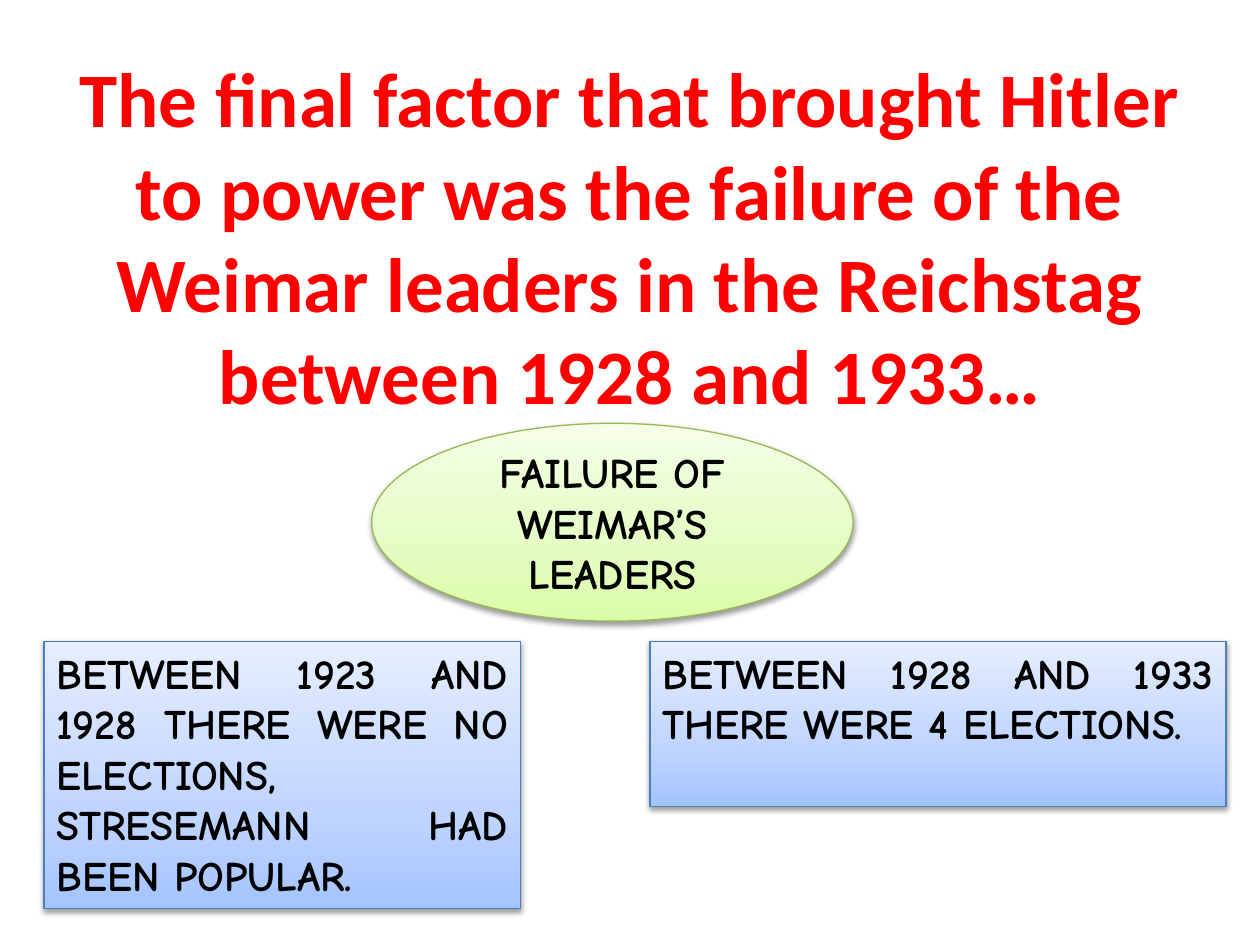
from copy import deepcopy

from lxml import etree
from pptx import Presentation
from pptx.dml.color import RGBColor
from pptx.enum.shapes import MSO_SHAPE
from pptx.enum.text import MSO_ANCHOR, MSO_AUTO_SIZE, PP_ALIGN
from pptx.oxml.ns import qn
from pptx.util import Pt

PX = 9144  # 100 px to the inch
OVAL, RECT = MSO_SHAPE.OVAL, MSO_SHAPE.RECTANGLE
TOP, MIDDLE = MSO_ANCHOR.TOP, MSO_ANCHOR.MIDDLE
CENTER, JUSTIFY = PP_ALIGN.CENTER, PP_ALIGN.JUSTIFY
FIXED = MSO_AUTO_SIZE.NONE

GREEN = ("DAFDA7", "E4FCC2", "F5FFE7")
BLUE = ("A4C4FF", "BFD4FF", "E6EEFF")
STOPS = (0, 0.35, 1)


def color(code):
    return RGBColor.from_string(code)


def scale(box):
    return [n * PX for n in box]


def write(shape, text, font, size, ink, align, anchor):
    frame = shape.text_frame
    frame.word_wrap = True
    frame.auto_size = FIXED
    frame.vertical_anchor = anchor
    para = frame.paragraphs[0]
    para.alignment = align
    run = para.add_run()
    run.text = text
    run.font.name = font
    run.font.size = Pt(size)
    run.font.bold = True
    run.font.color.rgb = color(ink)


def shade(shape, codes):
    """Fill from bottom to top through three colours."""
    fill = shape.fill
    fill.gradient()
    fill.gradient_angle = 90
    stops = shape._element.spPr.find(".//" + qn("a:gsLst"))
    stops.insert(1, deepcopy(stops[0]))
    for stop, code, place in zip(fill.gradient_stops, codes, STOPS):
        stop.color.rgb = color(code)
        stop.position = place


def shadow(shape):
    shape.shadow.inherit = False
    effects = shape._element.spPr.find(qn("a:effectLst"))
    outer = etree.SubElement(effects, qn("a:outerShdw"), blurRad="40000",
                             dist="20000", dir="5400000", rotWithShape="0")
    black = etree.SubElement(outer, qn("a:srgbClr"), val="000000")
    etree.SubElement(black, qn("a:alpha"), val="38000")


def add_title(slide, box, text):
    title = slide.shapes.title
    title.left, title.top, title.width, title.height = scale(box)
    write(title, text, "Calibri", 44, "FF0000", CENTER, MIDDLE)


def add_panel(slide, kind, box, text, codes, edge, align, anchor):
    panel = slide.shapes.add_shape(kind, *scale(box))
    shade(panel, codes)
    panel.line.color.rgb = color(edge)
    panel.line.width = Pt(0.75)
    shadow(panel)
    write(panel, text, "Comic Neue", 24, "000000", align, anchor)


def add_topic(slide, box, text):
    add_panel(slide, OVAL, box, text, GREEN, "98B955", CENTER, MIDDLE)


def add_fact(slide, box, text):
    add_panel(slide, RECT, box, text, BLUE, "4B7EBC", JUSTIFY, TOP)


def main():
    deck = Presentation()
    deck.slide_width, deck.slide_height = scale((1000, 750))
    slide = deck.slides.add_slide(deck.slide_layouts[5])

    # Heading
    add_title(slide, (50, 30, 900, 314),
              "The final factor that brought Hitler to power was the failure "
              "of the Weimar leaders in the Reichstag between 1928 and 1933…")

    # Central topic
    add_topic(slide, (295, 336, 382, 157), "FAILURE OF WEIMAR’S LEADERS")

    # Facts on either side
    add_fact(slide, (35, 509, 378, 212),
             "BETWEEN 1923 AND 1928 THERE WERE NO ELECTIONS, "
             "STRESEMANN HAD BEEN POPULAR.")
    add_fact(slide, (516, 509, 457, 131),
             "BETWEEN 1928 AND 1933 THERE WERE 4 ELECTIONS.")

    deck.save("out.pptx")


if __name__ == "__main__":
    main()
